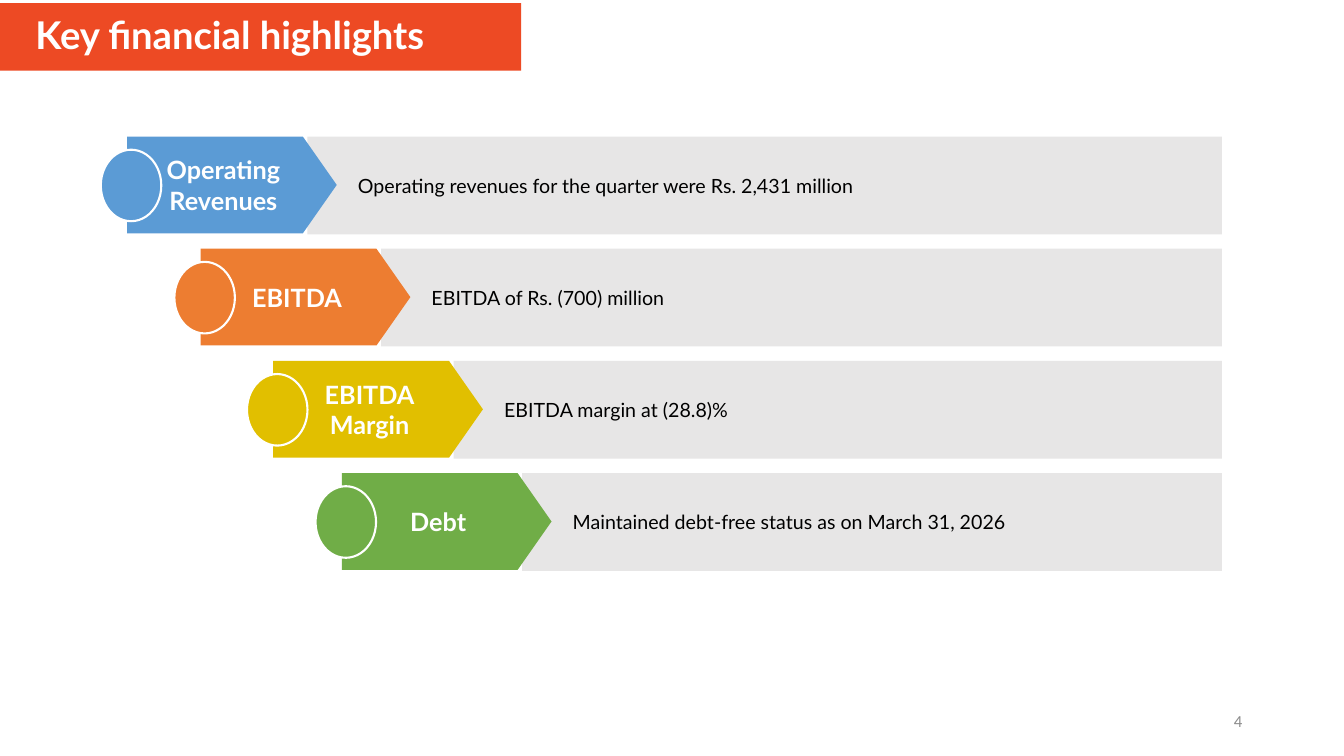
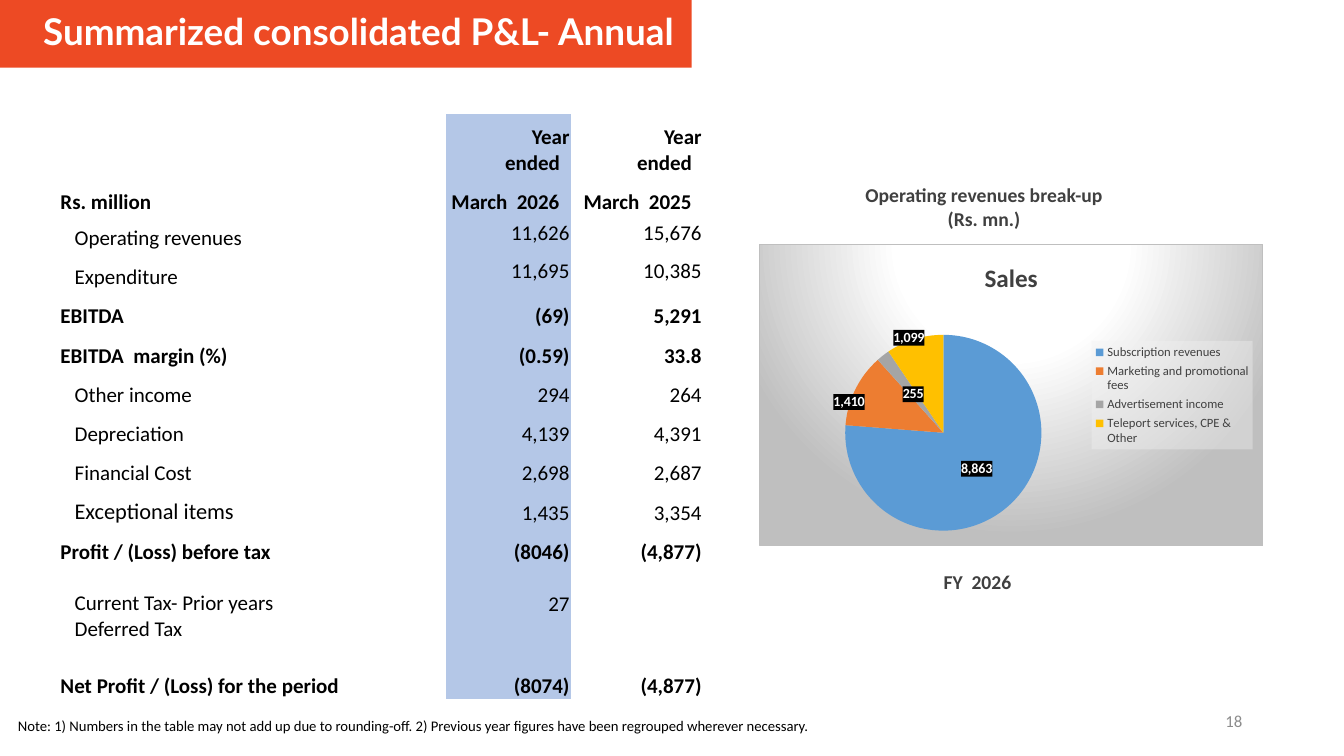
from lxml import etree
from pptx import Presentation
from pptx.chart import data as cd
from pptx.dml import color
from pptx.enum import chart as ce, shapes, text
from pptx.util import Inches, Pt

RED, WHITE, BLACK, GREY, DARK = "ED4A24", "FFFFFF", "000000", "8C8C8C", "404040"
BAR, TINT = "E7E6E6", "B4C7E7"
LEFT, MID, RIGHT = text.PP_ALIGN.LEFT, text.PP_ALIGN.CENTER, text.PP_ALIGN.RIGHT
TOP, CENTER, BOTTOM = (text.MSO_ANCHOR.TOP, text.MSO_ANCHOR.MIDDLE,
                       text.MSO_ANCHOR.BOTTOM)
NO_GRID = "{2D5ABB26-0587-4C30-8999-92F81FD0307C}"
SPACES = ('xmlns:c="http://schemas.openxmlformats.org/drawingml/2006/chart" '
          'xmlns:a="http://schemas.openxmlformats.org/drawingml/2006/main"')

# label lines, statement, left edge of the arrow, colour
STEPS = [
    (["Operating Revenues"],
     "Operating revenues for the quarter were Rs. 2,431 million", 1.26, "5B9BD5"),
    (["EBITDA"], "EBITDA of Rs. (700) million", 1.99, "ED7D31"),
    (["EBITDA", "Margin"], "EBITDA margin at (28.8)%", 2.71, "E1BF00"),
    (["Debt"], "Maintained debt-free status as on March 31, 2026", 3.39, "70AD47"),
]

COLS = [3.67, 0.11, 1.24, 1.31]
# style, row height, label lines, 2026, 2025
ROWS = [
    ("head", 0.62, [], ["Year", "ended"], ["Year", "ended"]),
    ("date", 0.39, ["Rs. million"], ["March  2026"], ["March  2025"]),
    ("top", 0.35, ["Operating revenues"], ["11,626"], ["15,676"]),
    ("top", 0.39, ["Expenditure"], ["11,695"], ["10,385"]),
    ("sum", 0.39, ["EBITDA"], ["(69)"], ["5,291"]),
    ("sum", 0.39, ["EBITDA  margin (%)"], ["(0.59)"], ["33.8"]),
    ("item", 0.39, ["Other income"], ["294"], ["264"]),
    ("item", 0.39, ["Depreciation"], ["4,139"], ["4,391"]),
    ("item", 0.39, ["Financial Cost"], ["2,698"], ["2,687"]),
    ("large", 0.39, ["Exceptional items"], ["1,435"], ["3,354"]),
    ("sum", 0.39, ["Profit / (Loss) before tax"], ["(8046)"], ["(4,877)"]),
    ("tax", 1.01, ["Current Tax- Prior years", "Deferred Tax"], ["27"], []),
    ("sum", 0.32, ["Net Profit / (Loss) for the period"], ["(8074)"], ["(4,877)"]),
]
BOLD = ("head", "date", "sum")

SALES = [
    ("Subscription revenues", 8863, "5B9BD5"),
    ("Marketing and promotional fees", 1410, "ED7D31"),
    ("Advertisement income", 255, "A5A5A5"),
    ("Teleport services, CPE & Other", 1099, "FFC000"),
]
SHIFTS = {1: (-0.1, -0.03), 3: (-0.04, -0.16)}


def rgb(code):
    return color.RGBColor.from_string(code)


def style(font, size, code, bold=False, face="Calibri"):
    font.size, font.bold, font.name = Pt(size), bold, face
    font.color.rgb = rgb(code)


def paint(shape, code):
    shape.fill.solid()
    shape.fill.fore_color.rgb = rgb(code)


def place(shape, x, y, w, h):
    shape.left, shape.top = Inches(x), Inches(y)
    shape.width, shape.height = Inches(w), Inches(h)


def write(frame, lines, size, code, bold=False, face="Calibri", align=LEFT):
    """Fill a frame with one paragraph per line; return the paragraphs."""
    for n, line in enumerate(lines):
        para = frame.add_paragraph() if n else frame.paragraphs[0]
        para.alignment = align
        run = para.add_run()
        run.text = line
        style(run.font, size, code, bold, face)
    return frame.paragraphs


def indent(para, width):
    para._p.get_or_add_pPr().set("marL", str(Inches(width)))


def note(slide, words, box, size, code, bold=False, align=LEFT, anchor=TOP):
    shape = slide.shapes.add_textbox(*map(Inches, box))
    frame = shape.text_frame
    frame.word_wrap, frame.vertical_anchor = True, anchor
    write(frame, [words], size, code, bold, align=align)
    return shape


def start(deck, words, y, width, size, number, align=LEFT):
    """Add a slide with its title band and page number."""
    slide = deck.slides.add_slide(deck.slide_layouts[5])
    title = slide.shapes.title
    place(title, 0, y, width, 0.67)
    paint(title, RED)
    frame = title.text_frame
    frame.auto_size = text.MSO_AUTO_SIZE.NONE
    frame.vertical_anchor = CENTER
    para = write(frame, [words], size, WHITE, True, "Lato", align)[0]
    para.line_spacing = 0.9
    indent(para, 0.25)
    note(slide, number, (9.42, 6.95, 3, 0.4), 12, GREY, align=RIGHT, anchor=CENTER)
    return slide


def block(slide, kind, code, *box):
    shape = slide.shapes.add_shape(kind, *map(Inches, box))
    shape.shadow.inherit = False
    paint(shape, code)
    shape.line.fill.background()
    frame = shape.text_frame
    frame.vertical_anchor = CENTER
    frame.margin_left = frame.margin_right = Inches(0.1)
    frame.margin_top = frame.margin_bottom = Inches(0.1)
    return shape


def steps(slide):
    kinds = shapes.MSO_SHAPE
    for n, (label, words, x, code) in enumerate(STEPS):
        y = 1.355 + n * 1.113
        edge = x + 1.79
        bar = block(slide, kinds.RECTANGLE, BAR, edge, y, 12.12 - edge, 0.97)
        bar.text_frame.margin_left = Inches(0.5)
        write(bar.text_frame, [words], 14, BLACK, face="Lato")
        arrow = block(slide, kinds.PENTAGON, code, x, y, 2.08, 0.96)
        arrow.adjustments[0] = 0.35
        write(arrow.text_frame, label, 18, WHITE, True, "Lato", MID)
        dot = block(slide, kinds.OVAL, code, x - 0.26, y + 0.13, 0.6, 0.71)
        dot.line.color.rgb = rgb(WHITE)
        dot.line.width = Pt(1.5)


def fill_cell(cell, kind, col, lines):
    cell.margin_left = cell.margin_right = cell.margin_top = Inches(0.01)
    cell.margin_bottom = 0
    cell.vertical_anchor = BOTTOM
    if col == 2:
        paint(cell, TINT)
    else:
        cell.fill.background()
    size = 16 if kind == "large" and col == 0 else 15
    if not lines:
        cell.text_frame.paragraphs[0].font.size = Pt(size)
    paras = write(cell.text_frame, lines, size, BLACK, kind in BOLD,
                  align=RIGHT if col else LEFT)
    if col == 0:
        if kind not in BOLD:
            cell.margin_left = Inches(0.15)
        if kind == "tax":
            cell.vertical_anchor = CENTER
    elif kind == "head" and lines:
        paras[1].alignment = LEFT
        indent(paras[1], COLS[col] - 0.66)
    elif kind == "date":
        cell.margin_right = Inches(0.11)
    elif kind in ("top", "tax"):
        cell.vertical_anchor = CENTER
        if kind == "tax":
            cell.margin_bottom = Inches(0.24)


def results(slide):
    box = (0.59, 1.13, sum(COLS), sum(row[1] for row in ROWS))
    table = slide.shapes.add_table(len(ROWS), len(COLS), *map(Inches, box)).table
    table.first_row = table.horz_banding = False
    table._tbl.tblPr.find("{*}tableStyleId").text = NO_GRID
    for col, width in zip(table.columns, COLS):
        col.width = Inches(width)
    for r, (kind, height, label, now, past) in enumerate(ROWS):
        table.rows[r].height = Inches(height)
        for c, lines in enumerate((label, [], now, past)):
            fill_cell(table.cell(r, c), kind, c, lines)


def node(tag, inner):
    return etree.fromstring(f"<c:{tag} {SPACES}>{inner}</c:{tag}>")


def layout(x, y, w=None, h=None):
    """Chart layout: an offset, or a fixed frame when a size is given."""
    parts = [] if w else [("x", x), ("y", y)]
    if w:
        parts = [("xMode", "edge"), ("yMode", "edge"),
                 ("x", x), ("y", y), ("w", w), ("h", h)]
    inner = "".join(f'<c:{tag} val="{val}"/>' for tag, val in parts)
    return node("layout", f"<c:manualLayout>{inner}</c:manualLayout>")


def veil(item, code, alpha):
    """Put a see-through fill behind a legend or label that has a font."""
    item.find("{*}txPr").addprevious(node("spPr", (
        f'<a:solidFill><a:srgbClr val="{code}"><a:alpha val="{alpha * 1000}"/>'
        "</a:srgbClr></a:solidFill>")))


def backdrop(chart):
    stops = "".join(f'<a:gs pos="{pos * 1000}"><a:srgbClr val="{code}"/></a:gs>'
                    for pos, code in ((0, WHITE), (39, WHITE), (100, "BFBFBF")))
    chart._chartSpace.find("{*}chart").addnext(node("spPr", (
        f'<a:gradFill><a:gsLst>{stops}</a:gsLst><a:path path="circle">'
        '<a:fillToRect l="50000" t="-80000" r="50000" b="180000"/></a:path>'
        '</a:gradFill><a:ln w="9525"><a:solidFill><a:srgbClr val="BFBFBF"/>'
        "</a:solidFill></a:ln>")))


def pie(slide):
    data = cd.CategoryChartData(number_format="#,##0")
    data.categories = [name for name, _, _ in SALES]
    data.add_series("Sales", [value for _, value, _ in SALES])
    chart = slide.shapes.add_chart(
        ce.XL_CHART_TYPE.PIE, *map(Inches, (7.53, 2.42, 5, 3)), data).chart
    style(chart.font, 10, BLACK)
    backdrop(chart)
    chart.has_title = True
    write(chart.chart_title.text_frame, ["Sales"], 18, DARK, True, align=MID)

    chart.has_legend = True
    legend = chart.legend
    legend.position = ce.XL_LEGEND_POSITION.RIGHT
    legend.include_in_layout = False
    style(legend.font, 9, DARK)
    legend._element.find("{*}legendPos").addnext(layout(0.66, 0.32, 0.32, 0.36))
    veil(legend._element, "F2F2F2", 39)

    plot = chart.plots[0]
    plot.vary_by_categories = True
    area = chart._chartSpace.find(".//{*}plotArea")
    for old in area.findall("{*}layout"):
        area.remove(old)
    frame = layout(0.17, 0.3, 0.39, 0.65)
    frame[0].insert(0, node("layoutTarget", ""))
    frame[0][0].set("val", "inner")
    area.insert(0, frame)

    series = plot.series[0]
    labels = series.data_labels
    labels.show_value = True
    labels.number_format, labels.number_format_is_linked = "#,##0", False
    labels.position = ce.XL_LABEL_POSITION.CENTER
    style(labels.font, 10, WHITE, True)
    veil(labels._element, BLACK, 75)
    for n, (_, _, code) in enumerate(SALES):
        point = series.points[n]
        paint(point.format, code)
        if n in SHIFTS:
            label = point.data_label
            style(label.font, 10, WHITE, True)
            label.position = ce.XL_LABEL_POSITION.CENTER
            item = labels._element.findall("{*}dLbl")[-1]
            veil(item, BLACK, 75)
            item.find("{*}idx").addnext(layout(*SHIFTS[n]))


def main():
    deck = Presentation()
    deck.slide_width, deck.slide_height = Inches(13.33), Inches(7.5)

    steps(start(deck, "Key financial highlights", 0.03, 5.17, 27.3, "4"))

    annual = start(deck, "Summarized consolidated P&L- Annual", 0, 6.86, 26.3,
                   "18", MID)
    results(annual)
    head = note(annual, "Operating revenues break-up (Rs. mn.)",
                (8.34, 1.81, 2.84, 0.48), 14, DARK, True, MID, CENTER)
    paint(head, WHITE)
    pie(annual)
    note(annual, "FY  2026", (8.97, 5.61, 1.45, 0.34), 14, DARK, True, MID)
    note(annual, "Note: 1) Numbers in the table may not add up due to rounding-off. "
         "2) Previous year figures have been regrouped wherever necessary.",
         (0.08, 7.06, 12.25, 0.28), 10.5, BLACK)
    deck.save("out.pptx")


if __name__ == "__main__":
    main()
